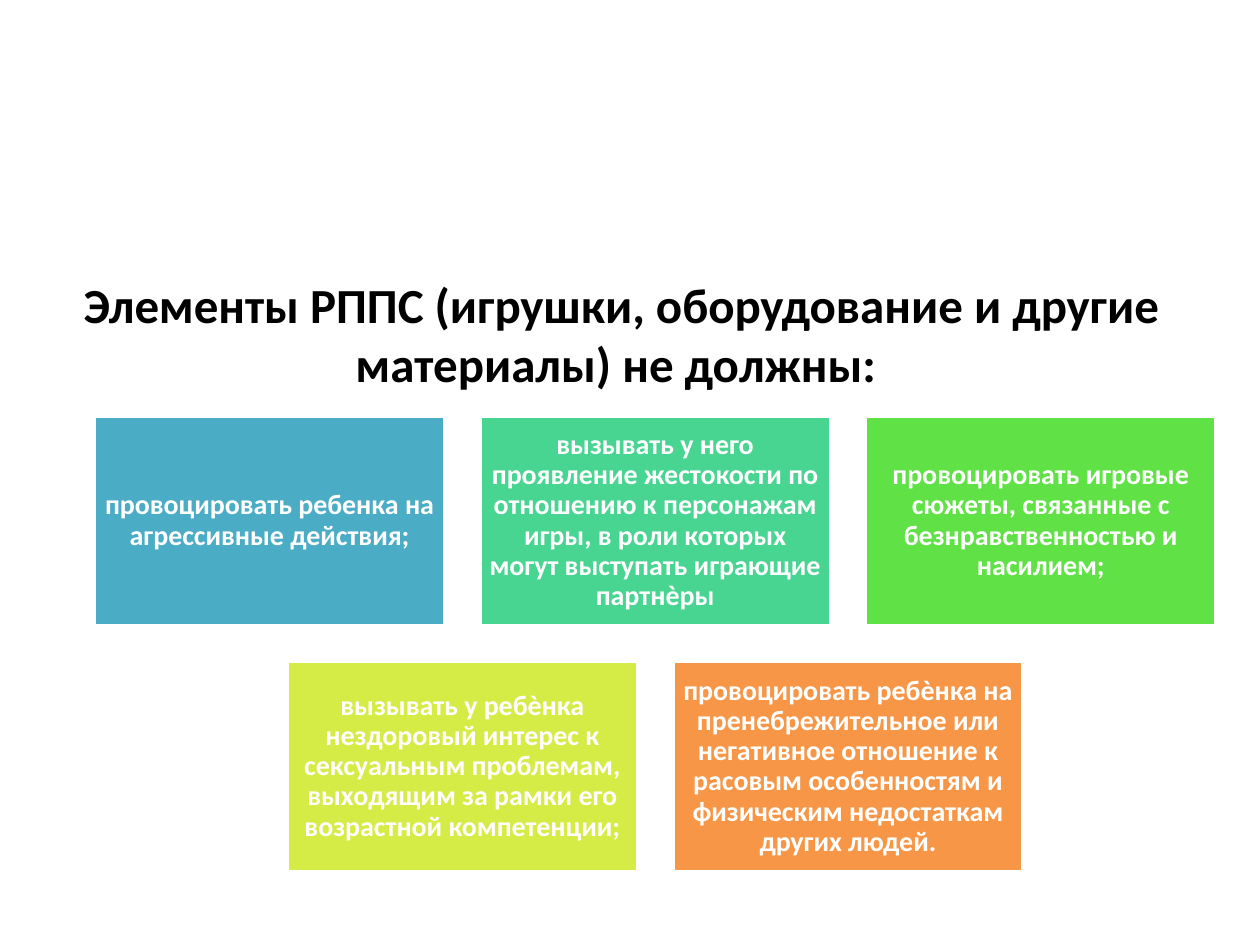
from pptx import Presentation
from pptx.dml.color import RGBColor
from pptx.enum.shapes import MSO_SHAPE as SHAPE
from pptx.enum.text import MSO_ANCHOR as ANCHOR, PP_ALIGN as ALIGN
from pptx.util import Inches, Pt

TITLE = "Элементы РППС (игрушки, оборудование и другие материалы) не должны: "
ROWS = [
    [
        ("провоцировать ребенка на агрессивные действия;", "4BACC6"),
        ("вызывать у него проявление жестокости по отношению к персонажам игры, "
         "в роли которых могут выступать играющие партнѐры", "48D491"),
        ("провоцировать игровые сюжеты, связанные с безнравственностью и насилием;",
         "60E146"),
    ],
    [
        ("вызывать у ребѐнка нездоровый интерес к сексуальным проблемам, "
         "выходящим за рамки его возрастной компетенции;", "D5EC46"),
        ("провоцировать ребѐнка на пренебрежительное или негативное отношение "
         "к расовым особенностям и физическим недостаткам других людей.", "F79646"),
    ],
]
CARD_W, CARD_H, GAP = 2.78, 1.67, 0.28
GRID_CENTER, GRID_TOP = 5.2, 3.3


def color(value):
    return RGBColor.from_string(value)


def write(tf, text, size, font_color):
    tf.word_wrap = True
    tf.vertical_anchor = ANCHOR.MIDDLE
    p = tf.paragraphs[0]
    p.alignment = ALIGN.CENTER
    r = p.add_run()
    r.text = text
    r.font.name = "Calibri"
    r.font.size = Pt(size)
    r.font.bold = True
    r.font.color.rgb = color(font_color)
    return p


def add_title(s, text):
    sp = s.shapes.title
    sp.left, sp.top = Inches(0.43), Inches(2.02)
    sp.width, sp.height = Inches(9), Inches(1.25)
    write(sp.text_frame, text, 28, "000000")


def add_card(s, left, top, text, fill):
    sp = s.shapes.add_shape(SHAPE.RECTANGLE, Inches(left), Inches(top),
                            Inches(CARD_W), Inches(CARD_H))
    sp.shadow.inherit = False
    sp.fill.solid()
    sp.fill.fore_color.rgb = color(fill)
    sp.line.color.rgb = color("FFFFFF")
    sp.line.width = Pt(2)
    tf = sp.text_frame
    tf.margin_left = tf.margin_right = Inches(0.07)
    tf.margin_top = tf.margin_bottom = Inches(0.07)
    p = write(tf, text, 16, "FFFFFF")
    p.line_spacing = 0.9


def add_card_row(s, top, cards):
    step = CARD_W + GAP
    left = GRID_CENTER - (len(cards) * step - GAP) / 2
    for i, (text, fill) in enumerate(cards):
        add_card(s, left + i * step, top, text, fill)


def main():
    prs = Presentation()
    prs.slide_width, prs.slide_height = Inches(10), Inches(7.5)
    s = prs.slides.add_slide(prs.slide_layouts[5])
    add_title(s, TITLE)
    for i, cards in enumerate(ROWS):
        add_card_row(s, GRID_TOP + i * (CARD_H + GAP), cards)
    prs.save("out.pptx")


if __name__ == "__main__":
    main()
